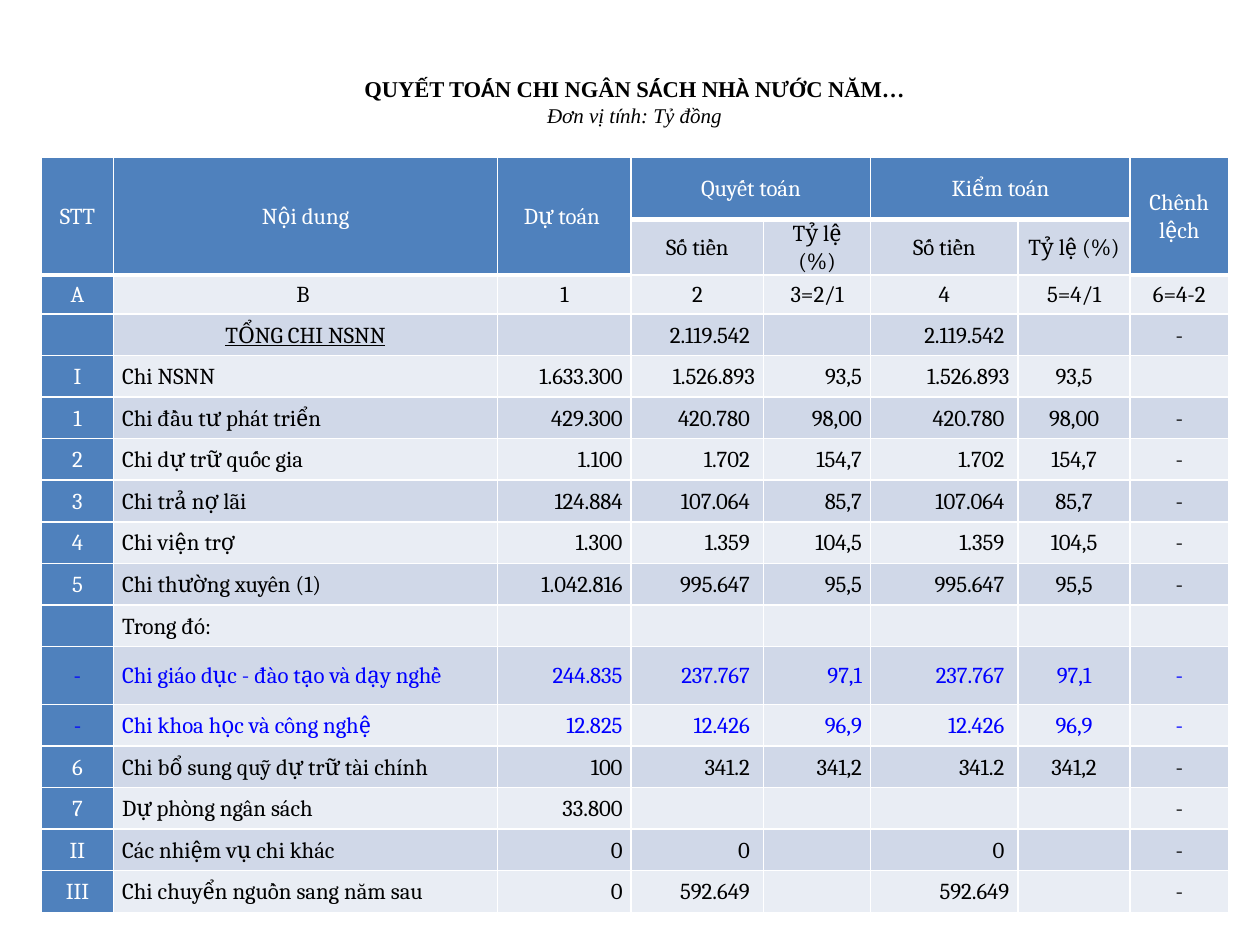
from lxml.etree import SubElement
from pptx import Presentation
from pptx.dml.color import RGBColor
from pptx.enum.text import MSO_ANCHOR, MSO_AUTO_SIZE, PP_ALIGN
from pptx.oxml.ns import qn
from pptx.util import Inches, Pt

hues = {
    "head": "4F81BD",
    "dark": "D0D8E8",
    "light": "E9EDF4",
    "white": "FFFFFF",
    "black": "000000",
    "blue": "0000FF",
}
wides = [0.57, 3.05, 1.06, 1.05, 0.85, 1.17, 0.89, 0.78]
highs = [0.49, 0.41, 0.31] + [0.33] * 8 + [0.46] + [0.33] * 5
left, mid, right = PP_ALIGN.LEFT, PP_ALIGN.CENTER, PP_ALIGN.RIGHT
aligns = [mid, left, right, right, right, right, mid, mid]
rows = [
    ["STT", "Nội dung", "Dự toán ", "Quyết toán", "", "Kiểm toán", "", "Chênh lệch"],
    ["", "", "", "Số tiền", "Tỷ lệ (%)", "Số tiền", "Tỷ lệ (%)", ""],
    ["A", "B ", "1", "2", "3=2/1", "4", "5=4/1", "6=4-2"],
    ["", "TỔNG CHI NSNN", "", "2.119.542 ", "", "2.119.542 ", "", "-"],
    ["I", "Chi NSNN", "1.633.300", "1.526.893", "93,5", "1.526.893", "93,5", ""],
    ["1", "Chi đầu tư phát triển", "429.300", "420.780 ", "98,00", "420.780 ", "98,00", "-"],
    ["2", "Chi dự trữ quốc gia", "1.100", "1.702 ", "154,7", "1.702 ", "154,7", "-"],
    ["3", "Chi trả nợ lãi", "124.884", "107.064 ", "85,7", "107.064 ", "85,7", "-"],
    ["4", "Chi viện trợ", "1.300", "1.359 ", "104,5", "1.359 ", "104,5", "-"],
    ["5", "Chi thường xuyên (1)", "1.042.816", "995.647 ", "95,5", "995.647 ", "95,5", "-"],
    ["", "Trong đó:", "", "", "", "", "", ""],
    [" - ", "Chi giáo dục - đào tạo và dạy nghề", "244.835", "237.767 ", "97,1", "237.767 ", "97,1", "-"],
    ["-", "Chi khoa học và công nghệ", "12.825", "12.426 ", "96,9", "12.426 ", "96,9", "-"],
    ["6", "Chi bổ sung quỹ dự trữ tài chính", "100", "341.2 ", "341,2", "341.2 ", "341,2", "-"],
    ["7", "Dự phòng ngân sách", "33.800", "", "", "", "", "-"],
    ["II", "Các nhiệm vụ chi khác", "0", "0 ", "", "0 ", "", "-"],
    ["III", "Chi chuyển nguồn sang năm sau", "0", "592.649 ", "", "592.649", "", "-"],
]
titles = [
    (["QUYẾT TO", "Á", "N CHI NGÂN S", "Á", "CH NH", "À", " NƯỚC NĂM…"], 12.9, True),
    (["Đơn vị t", "í", "nh: Tỷ đồng"], 12, False),
]


def paint(font, face, size, hue):
    font.name = face
    font.size = Pt(size)
    font.color.rgb = RGBColor.from_string(hues[hue])


def edge(cell, side, width):
    line = SubElement(cell._tc.get_or_add_tcPr(), qn("a:ln" + side), w=str(Pt(width)))
    fill = SubElement(line, qn("a:solidFill"))
    SubElement(fill, qn("a:srgbClr"), val=hues["white"])


deck = Presentation()
deck.slide_width, deck.slide_height = Inches(10), Inches(7.5)
slide = deck.slides.add_slide(deck.slide_layouts[6])

frame = slide.shapes.add_table(
    len(rows), len(wides), Inches(0.33), Inches(1.25), Inches(9.42), Inches(5.92)
)
table = frame.table
table.first_row = False
table.horz_banding = False
for col, wide in zip(table.columns, wides):
    col.width = Inches(wide)
for row, high in zip(table.rows, highs):
    row.height = Inches(high)
for c in (0, 1, 2, 7):
    table.cell(0, c).merge(table.cell(1, c))
for c in (3, 5):
    table.cell(0, c).merge(table.cell(0, c + 1))

for r, row in enumerate(rows):
    for c, text in enumerate(row):
        cell = table.cell(r, c)
        top = r == 0 or c == 0
        total = r == 3 and c == 1
        for side in "LRTB":
            edge(cell, side, 3 if r == 0 and side == "B" else 1)
        cell.fill.solid()
        shade = "head" if top else "dark" if r % 2 else "light"
        cell.fill.fore_color.rgb = RGBColor.from_string(hues[shade])
        cell.vertical_anchor = MSO_ANCHOR.MIDDLE
        cell.margin_left = cell.margin_right = Inches(0.07)
        cell.margin_top = cell.margin_bottom = Inches(0)
        if not text:
            continue
        para = cell.text_frame.paragraphs[0]
        para.text = text
        para.alignment = mid if r < 3 or total else aligns[c]
        para.line_spacing = 1.07
        if r > 2 and c > 1:
            para.space_after = Pt(8)
        font = para.runs[0].font
        paint(font, "Cambria", 13, "blue" if r in (11, 12) else "white" if top else "black")
        font.bold = False
        if total:
            font.underline = True

box = slide.shapes.add_textbox(Inches(0.71), Inches(0.55), Inches(8.65), Inches(0.51))
body = box.text_frame
body.word_wrap = True
body.auto_size = MSO_AUTO_SIZE.SHAPE_TO_FIT_TEXT
body.vertical_anchor = MSO_ANCHOR.MIDDLE
for n, (parts, size, bold) in enumerate(titles):
    para = body.add_paragraph() if n else body.paragraphs[0]
    para.alignment = mid
    for part in parts:
        run = para.add_run()
        run.text = part
        paint(run.font, "Calibri" if len(part) == 1 else "Times New Roman", size, "black")
        run.font.bold = bold
        run.font.italic = not bold

deck.save("out.pptx")
